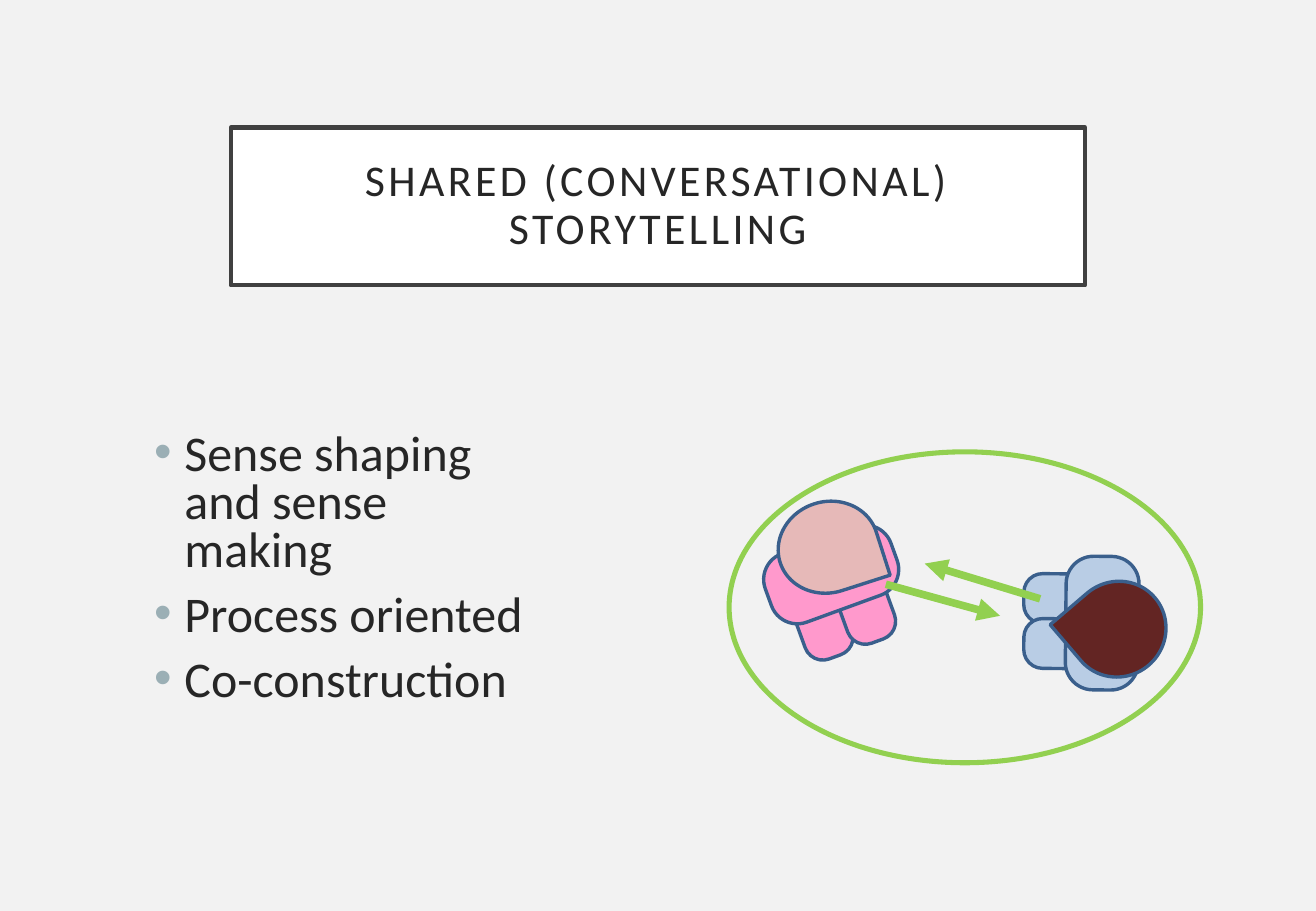
import pptx
import pptx.util
import pptx.dml.color
import pptx.enum.shapes
import pptx.enum.text
import pptx.oxml
import pptx.oxml.ns

Inches, Pt = pptx.util.Inches, pptx.util.Pt
SHAPE = pptx.enum.shapes.MSO_SHAPE
ALIGN = pptx.enum.text.PP_ALIGN
ANCHOR = pptx.enum.text.MSO_ANCHOR
NS = pptx.oxml.ns.nsdecls("a")


def rgb(value):
    return pptx.dml.color.RGBColor.from_string(value)


def add_text(tf, text, first=False, size=18, font="Calibri", color="262626",
             align=ALIGN.LEFT, line_spacing=1.0, before=0, spacing=None,
             bullet=None, indent=0.25):
    """Add one formatted paragraph to a text frame."""
    p = tf.paragraphs[0] if first else tf.add_paragraph()
    p.alignment, p.line_spacing, p.space_before = align, line_spacing, Pt(before)
    r = p.add_run()
    r.text = text
    r.font.size, r.font.name = Pt(size), font
    r.font.color.rgb = rgb(color)
    if spacing:
        r.font._element.set("spc", str(spacing * 100))
    if bullet:
        pPr = p._p.get_or_add_pPr()
        pPr.set("marL", str(Inches(indent)))
        pPr.set("indent", str(-Inches(indent)))
        for xml in (f'<a:buClr {NS}><a:srgbClr val="{bullet}"/></a:buClr>',
                    f'<a:buFont {NS} typeface="Arial"/>',
                    f'<a:buChar {NS} char="•"/>'):
            pPr.append(pptx.oxml.parse_xml(xml))
    return p


class Deck:
    outline = "3A5F8C"
    green = "92D050"
    corner = 0.377

    def __init__(self, width, height, background):
        self.prs = pptx.Presentation()
        self.prs.slide_width, self.prs.slide_height = Inches(width), Inches(height)
        self.s = self.prs.slides.add_slide(self.prs.slide_layouts[6])
        self.s.background.fill.solid()
        self.s.background.fill.fore_color.rgb = rgb(background)

    def shape(self, kind, box, fill=None, line=None, weight=2, rotation=0, parent=None):
        sp = (parent or self.s).shapes.add_shape(kind, *map(Inches, box))
        sp.shadow.inherit = False
        sp.rotation = rotation
        if fill:
            sp.fill.solid()
            sp.fill.fore_color.rgb = rgb(fill)
        else:
            sp.fill.background()
        sp.line.color.rgb = rgb(line or self.outline)
        sp.line.width = Pt(weight)
        if kind == SHAPE.ROUNDED_RECTANGLE:
            sp.adjustments[0] = self.corner
        return sp

    def title(self, text, box):
        sp = self.shape(SHAPE.RECTANGLE, box, "FFFFFF", "404040", 2.5)
        tf = sp.text_frame
        tf.word_wrap = True
        tf.vertical_anchor = ANCHOR.MIDDLE
        tf.margin_left = tf.margin_right = tf.margin_top = tf.margin_bottom = Inches(0.2)
        add_text(tf, text, first=True, size=26, align=ALIGN.CENTER,
                 line_spacing=0.9, spacing=2)

    def bullets(self, items, box):
        tf = self.s.shapes.add_textbox(*map(Inches, box)).text_frame
        tf.word_wrap = True
        for i, item in enumerate(items):
            add_text(tf, item, first=i == 0, size=29.6, line_spacing=0.8,
                     before=10, bullet="9BAFB5")

    def person(self, clothes, hair, body, head):
        """Seen from above: legs and shoulders, then the head on top."""
        group = self.s.shapes.add_group_shape()
        for box, rotation in body:
            self.shape(SHAPE.ROUNDED_RECTANGLE, box, clothes,
                       rotation=rotation, parent=group)
        box, rotation = head
        self.shape(SHAPE.TEAR, box, hair, rotation=rotation, parent=group)

    def arrow(self, start, end):
        c = self.s.shapes.add_connector(pptx.enum.shapes.MSO_CONNECTOR.STRAIGHT,
                                        *map(Inches, start + end))
        c.line.color.rgb = rgb(self.green)
        c.line.width = Pt(4.5)
        c.line._get_or_add_ln().append(
            pptx.oxml.parse_xml(f'<a:tailEnd {NS} type="triangle"/>'))
        c._element.spPr.append(pptx.oxml.parse_xml(f'<a:effectLst {NS}/>'))


def main():
    deck = Deck(10.83, 7.5, "F2F2F2")

    # Title and points
    deck.title("SHARED (CONVERSATIONAL) STORYTELLING", (1.9, 1.05, 7.03, 1.3))
    deck.bullets(["Sense shaping and sense making", "Process oriented",
                  "Co-construction"], (1.17, 3.52, 3.4, 2.12))

    # The two storytellers
    leg, shoulders = (0.41, 0.74), (0.6, 1.1)
    deck.person("B9CDE5", "632523",
                [((8.59, 4.56) + leg, 90.6), ((8.59, 4.93) + leg, 90.6),
                 ((8.77, 4.58) + shoulders, 180.6)],
                ((8.81, 4.78, 0.78, 0.8), 229.5))
    deck.person("FF99CC", "E6B9B8",
                [((6.54, 4.69) + leg, 340), ((6.89, 4.56) + leg, 340),
                 ((6.54, 4.18) + shoulders, 70)],
                ((6.44, 4.09, 0.75, 0.83), 72.2))

    # Shared space and exchange
    deck.shape(SHAPE.FLOWCHART_CONNECTOR, (6, 3.72, 3.88, 2.56),
               line=deck.green, weight=3)
    deck.arrow((8.56, 4.93), (7.61, 4.64))
    deck.arrow((7.29, 4.81), (8.23, 5.07))

    deck.prs.save("out.pptx")


if __name__ == "__main__":
    main()
